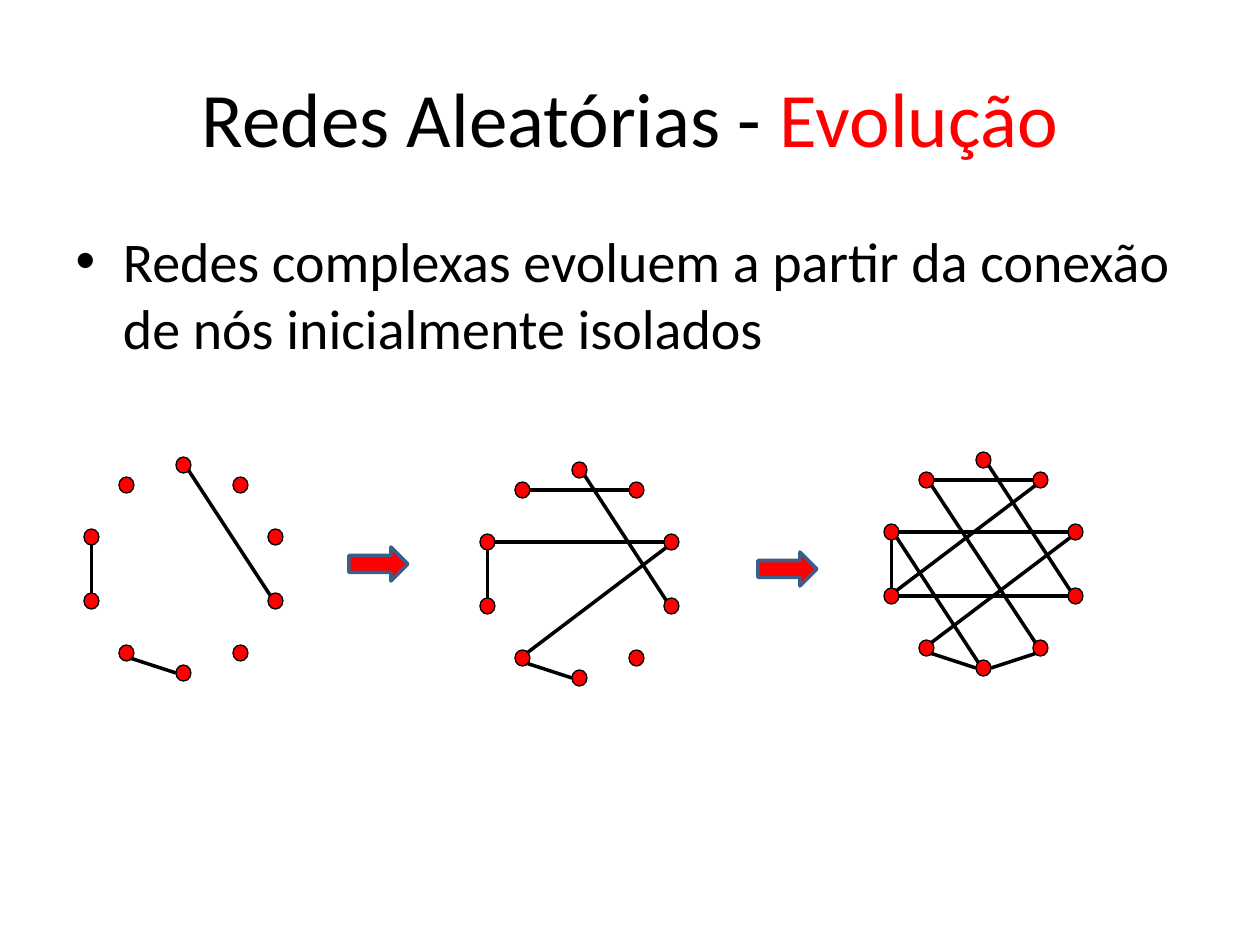
from lxml import etree
from pptx import Presentation
from pptx.dml.color import RGBColor
from pptx.enum.shapes import MSO_CONNECTOR, MSO_SHAPE
from pptx.enum.text import MSO_ANCHOR, PP_ALIGN
from pptx.oxml.ns import qn
from pptx.util import Emu, Pt

STRAIGHT = MSO_CONNECTOR.STRAIGHT
OVAL, RIGHT_ARROW = MSO_SHAPE.OVAL, MSO_SHAPE.RIGHT_ARROW
MIDDLE, CENTER = MSO_ANCHOR.MIDDLE, PP_ALIGN.CENTER

PX_PER_INCH = 126
FONT = "Calibri"
BLACK, RED, BLUE = "000000", "FF0000", "3A5F8C"

NODE_SIZE = (15, 16)
NODES = {
    "top": (92, 0),
    "top right": (149, 20),
    "upper right": (184, 72),
    "lower right": (184, 136),
    "bottom right": (149, 188),
    "bottom": (92, 208),
    "bottom left": (35, 188),
    "lower left": (0, 136),
    "upper left": (0, 72),
    "top left": (35, 20),
}
RIMS = {
    "N": (0.5, 0), "NE": (0.85, 0.15), "E": (1, 0.5), "SE": (0.85, 0.85),
    "S": (0.5, 1), "SW": (0.15, 0.85), "W": (0, 0.5), "NW": (0.15, 0.15),
}

FIRST_LINKS = [
    ("bottom left", "SE", "bottom", "W"),
    ("upper left", "S", "lower left", "N"),
    ("lower right", "NW", "top", "SE"),
]
SECOND_LINKS = FIRST_LINKS + [
    ("top left", "E", "top right", "W"),
    ("bottom left", "NE", "upper right", "SW"),
    ("upper left", "E", "upper right", "W"),
]
THIRD_LINKS = SECOND_LINKS + [
    ("bottom right", "NW", "top left", "SE"),
    ("lower left", "E", "lower right", "W"),
    ("lower left", "NE", "top right", "SW"),
    ("bottom", "E", "bottom right", "SW"),
    ("upper left", "SE", "bottom", "NW"),
]
STAGES = [
    ((84, 457), FIRST_LINKS),
    ((480, 462), SECOND_LINKS),
    ((884, 452), THIRD_LINKS),
]
ARROWS = [(349, 547), (758, 552)]
ARROW_SIZE = (59, 34)


def px(length):
    """Convert pixels to EMU."""
    return Emu(round(length * 914400 / PX_PER_INCH))


def color(hex_code):
    """Convert a hex string to a colour."""
    return RGBColor.from_string(hex_code)


def place(shape, left, top, width, height):
    """Move and size a placeholder."""
    shape.left, shape.top = px(left), px(top)
    shape.width, shape.height = px(width), px(height)


def style_paragraph(paragraph, size):
    """Set the font of a whole paragraph."""
    paragraph.font.name = FONT
    paragraph.font.size = Pt(size)
    paragraph.font.color.rgb = color(BLACK)


def add_title(slide, topic, highlight):
    """Fill the title, with its last part in red."""
    title = slide.shapes.title
    place(title, 63, 38, 1134, 157)
    title.text_frame.vertical_anchor = MIDDLE
    heading = title.text_frame.paragraphs[0]
    heading.alignment = CENTER
    style_paragraph(heading, 44)
    heading.add_run().text = topic
    accent = heading.add_run()
    accent.text = highlight
    accent.font.color.rgb = color(RED)


def add_body(slide, statement):
    """Fill the bulleted body."""
    body = slide.placeholders[1]
    place(body, 63, 220, 1134, 659)
    body.text_frame.text = statement
    style_paragraph(body.text_frame.paragraphs[0], 32)


def add_red_shape(shapes, preset, position, size, outline, weight):
    """Add a red preset shape with an outline."""
    shape = shapes.add_shape(preset, *map(px, position + size))
    shape.shadow.inherit = False
    shape.fill.solid()
    shape.fill.fore_color.rgb = color(RED)
    shape.line.color.rgb = color(outline)
    shape.line.width = Pt(weight)


def rim_point(origin, node, side):
    """Find a point on the rim of a node."""
    return [
        px(start + offset + share * length)
        for start, offset, share, length
        in zip(origin, NODES[node], RIMS[side], NODE_SIZE)
    ]


def add_link(shapes, begin, end):
    """Add a black line between two points."""
    link = shapes.add_connector(STRAIGHT, *begin, *end)
    link.line.color.rgb = color(BLACK)
    link.line.width = Pt(2)
    etree.SubElement(link._element.spPr, qn("a:effectLst"))


def add_network(slide, origin, links):
    """Add a grouped ring of nodes with its links."""
    shapes = slide.shapes.add_group_shape().shapes
    left, top = origin
    for x, y in NODES.values():
        add_red_shape(shapes, OVAL, (left + x, top + y), NODE_SIZE, BLACK, 0.75)
    for source, source_side, target, target_side in links:
        add_link(
            shapes,
            rim_point(origin, source, source_side),
            rim_point(origin, target, target_side),
        )


def main():
    """Build and save the slide."""
    deck = Presentation()
    deck.slide_width, deck.slide_height = px(1260), px(945)
    slide = deck.slides.add_slide(deck.slide_layouts[1])
    add_title(slide, "Redes Aleatórias - ", "Evolução")
    add_body(
        slide,
        "Redes complexas evoluem a partir da conexão de nós inicialmente isolados",
    )
    for origin, links in STAGES:
        add_network(slide, origin, links)
    for position in ARROWS:
        add_red_shape(slide.shapes, RIGHT_ARROW, position, ARROW_SIZE, BLUE, 2)
    deck.save("out.pptx")


if __name__ == "__main__":
    main()
